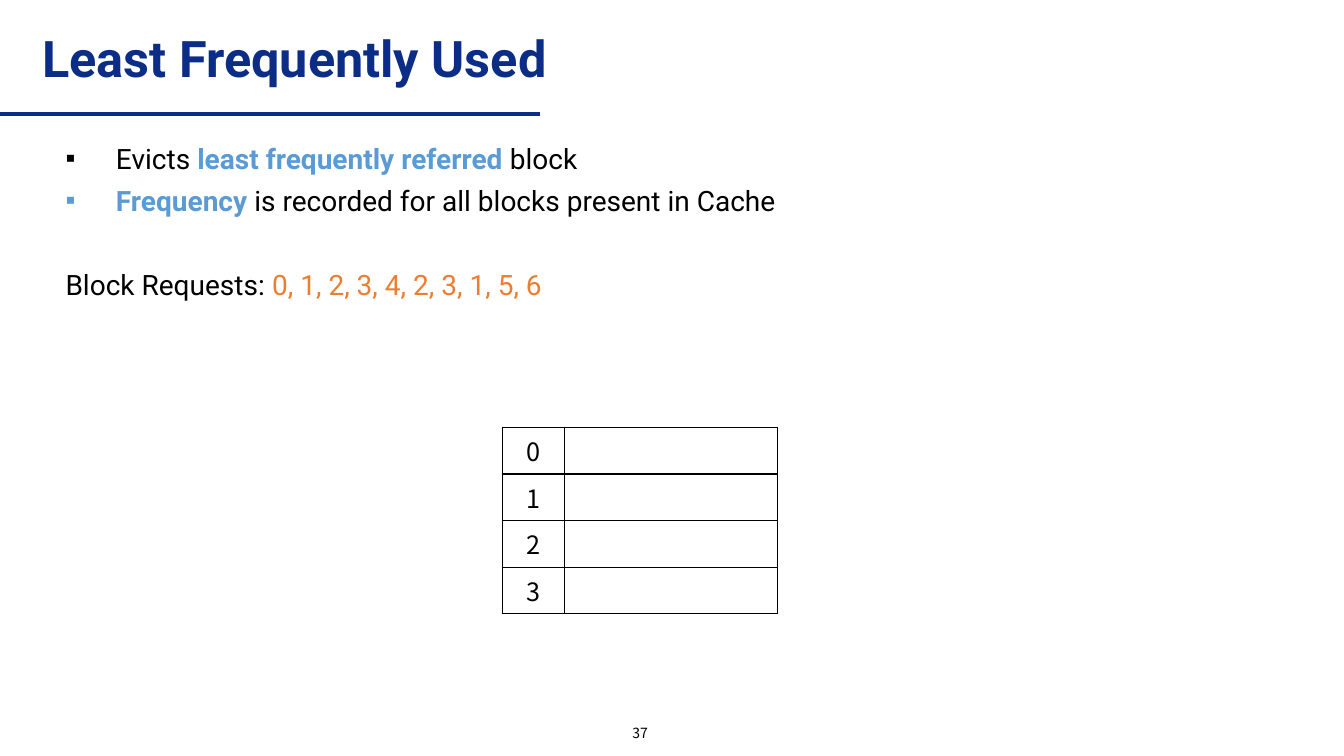
"""Build the slide on least-frequently-used cache eviction."""
import dataclasses

import pptx
import pptx.dml.color
import pptx.enum.shapes
import pptx.enum.text
import pptx.oxml
import pptx.oxml.ns
import pptx.util

Inches = pptx.util.Inches
Pt = pptx.util.Pt
ALIGN = pptx.enum.text.PP_ALIGN
ANCHOR = pptx.enum.text.MSO_ANCHOR


@dataclasses.dataclass(frozen=True)
class Theme:
    """Fonts, colours and type sizes of the slide."""
    text_font: str = "Roboto"
    number_font: str = "Noto Sans CJK KR"
    navy: str = "0B2D86"
    black: str = "000000"
    blue: str = "5B9BD5"
    orange: str = "ED7D31"
    title_size: int = 36
    body_size: int = 20
    cell_size: int = 18
    page_size: int = 10


THEME = Theme()


def rgb(colour):
    """Turn a hex string into a colour."""
    return pptx.dml.color.RGBColor.from_string(colour)


def drawing_xml(markup):
    """Parse one element of the drawing namespace."""
    head, tail = markup.split(" ", 1)
    return pptx.oxml.parse_xml(f"{head} {pptx.oxml.ns.nsdecls('a')} {tail}")


def add_run(paragraph, text, size, colour=THEME.black, bold=False, font=THEME.text_font):
    """Append one formatted run."""
    run = paragraph.add_run()
    run.text = text
    run.font.name = font
    run.font.size = Pt(size)
    run.font.bold = bold
    run.font.color.rgb = rgb(colour)
    if font == THEME.number_font:
        run.font._element.append(drawing_xml(f'<a:ea typeface="{font}"/>'))


def place(shape, left, top, width, height, anchor):
    """Position a text shape and set up its frame."""
    shape.left, shape.top = Inches(left), Inches(top)
    shape.width, shape.height = Inches(width), Inches(height)
    frame = shape.text_frame
    frame.word_wrap = True
    frame.auto_size = pptx.enum.text.MSO_AUTO_SIZE.NONE
    frame.vertical_anchor = anchor
    return frame


def set_bullet(paragraph, symbol):
    """Give a paragraph a hanging bullet, or none."""
    properties = paragraph._p.get_or_add_pPr()
    indent = Inches(0.5) if symbol else 0
    properties.set("marL", str(indent))
    properties.set("indent", str(-indent))
    bullet = f'<a:buChar char="{symbol}"/>' if symbol else "<a:buNone />"
    properties.append(drawing_xml(bullet))


def add_title(slide, text):
    """Fill the title and draw the rule beneath it."""
    rule = slide.shapes.add_connector(
        pptx.enum.shapes.MSO_CONNECTOR.STRAIGHT,
        Inches(0), Inches(1.13), Inches(5.36), Inches(1.13))
    rule.line.color.rgb = rgb(THEME.navy)
    rule.line.width = Pt(3)
    rule._element.spPr.append(drawing_xml("<a:effectLst />"))
    heading = place(slide.shapes.title, 0.32, 0.24, 9.17, 0.74, ANCHOR.MIDDLE).paragraphs[0]
    heading.alignment = ALIGN.LEFT
    heading.line_spacing = 0.9
    add_run(heading, text, THEME.title_size, THEME.navy, True)


def add_body(slide, points):
    """Fill the body from (bullet, space before, runs) entries."""
    frame = place(slide.placeholders[1], 0.55, 1.35, 12.14, 1.81, ANCHOR.TOP)
    for index, (symbol, space, runs) in enumerate(points):
        point = frame.add_paragraph() if index else frame.paragraphs[0]
        point.space_before = Pt(space)
        set_bullet(point, symbol)
        for text, colour, bold in runs:
            add_run(point, text, THEME.body_size, colour, bold)


def style_cell(cell):
    """Clear a cell's fill and outline it in black."""
    properties = cell._tc.get_or_add_tcPr()
    for side in ("lnL", "lnR", "lnT", "lnB"):
        properties.append(drawing_xml(
            f'<a:{side} w="{Pt(1)}"><a:solidFill><a:srgbClr val="{THEME.black}"/>'
            f"</a:solidFill></a:{side}>"))
    cell.fill.background()


def add_cache_table(slide, slots):
    """Add the table of numbered, empty cache slots."""
    cache = slide.shapes.add_table(
        slots, 2, Inches(4.98), Inches(4.24), Inches(2.73), Inches(0.4 * slots)).table
    cache.first_row = cache.horz_banding = False
    cache.columns[0].width, cache.columns[1].width = Inches(0.62), Inches(2.11)
    for slot in range(slots):
        label = cache.cell(slot, 0).text_frame.paragraphs[0]
        label.alignment = ALIGN.CENTER
        add_run(label, str(slot), THEME.cell_size, font=THEME.number_font)
    for cell in cache.iter_cells():
        style_cell(cell)


def add_page_number(slide, number):
    """Add the centred page number at the foot."""
    box = slide.shapes.add_textbox(0, 0, 0, 0)
    page = place(box, 4.85, 7.11, 3, 0.32, ANCHOR.MIDDLE).paragraphs[0]
    page.alignment = ALIGN.CENTER
    add_run(page, number, THEME.page_size, font=THEME.number_font)


def main():
    """Build and save the slide."""
    deck = pptx.Presentation()
    deck.slide_width, deck.slide_height = Inches(13.33), Inches(7.5)
    slide = deck.slides.add_slide(deck.slide_layouts[1])
    add_title(slide, "Least Frequently Used")
    add_body(slide, [
        ("▪", 0, [("Evicts ", THEME.black, False),
                  ("least frequently referred ", THEME.blue, True),
                  ("block", THEME.black, False)]),
        ("▪", 6, [("Frequency ", THEME.blue, True),
                  ("is recorded for all blocks present in Cache", THEME.black, False)]),
        (None, 36, [("Block Requests: ", THEME.black, False),
                    ("0, 1, 2, 3, 4, 2, 3, 1, 5, 6", THEME.orange, False)]),
    ])
    add_cache_table(slide, 4)
    add_page_number(slide, "37")
    deck.save("out.pptx")


if __name__ == "__main__":
    main()
